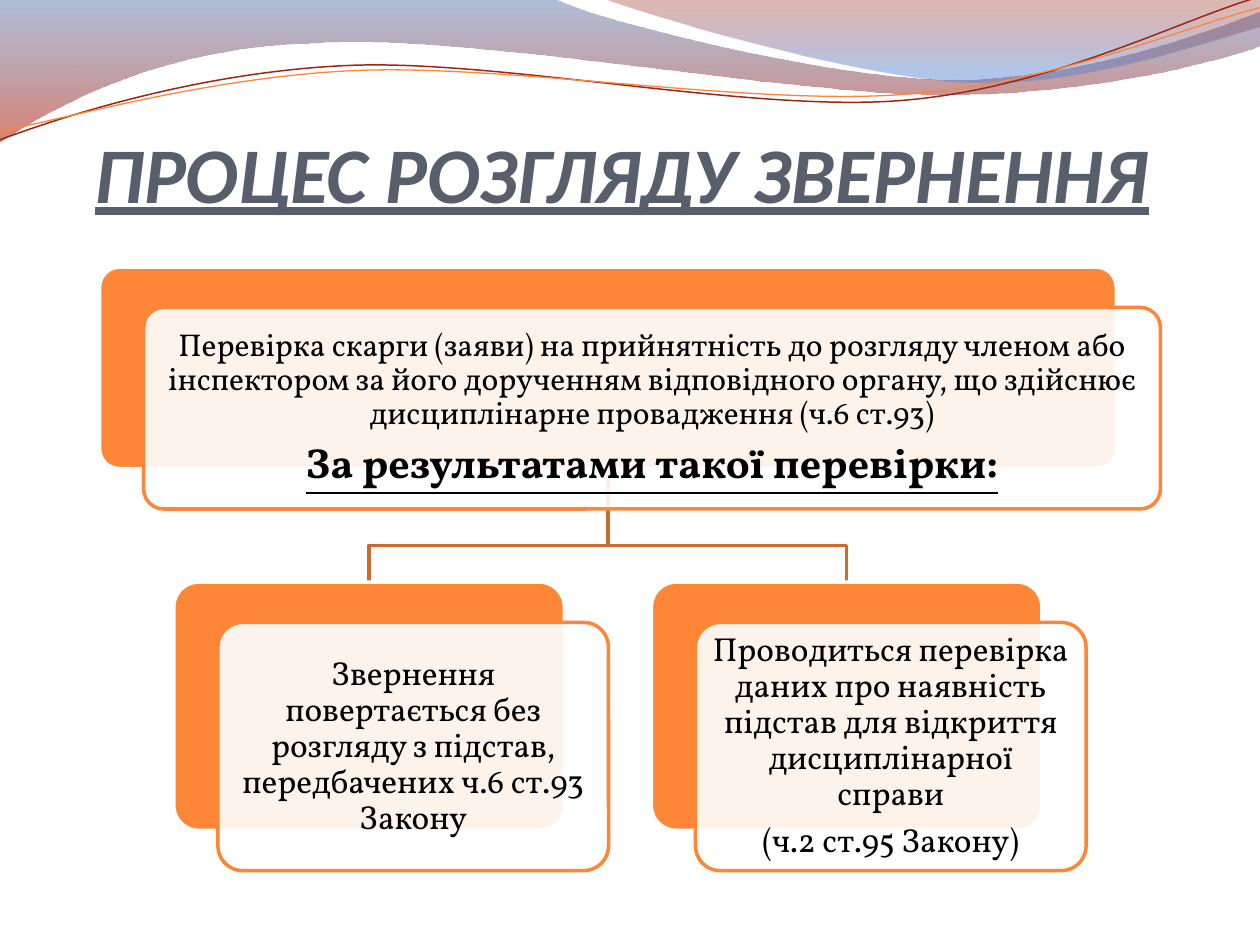
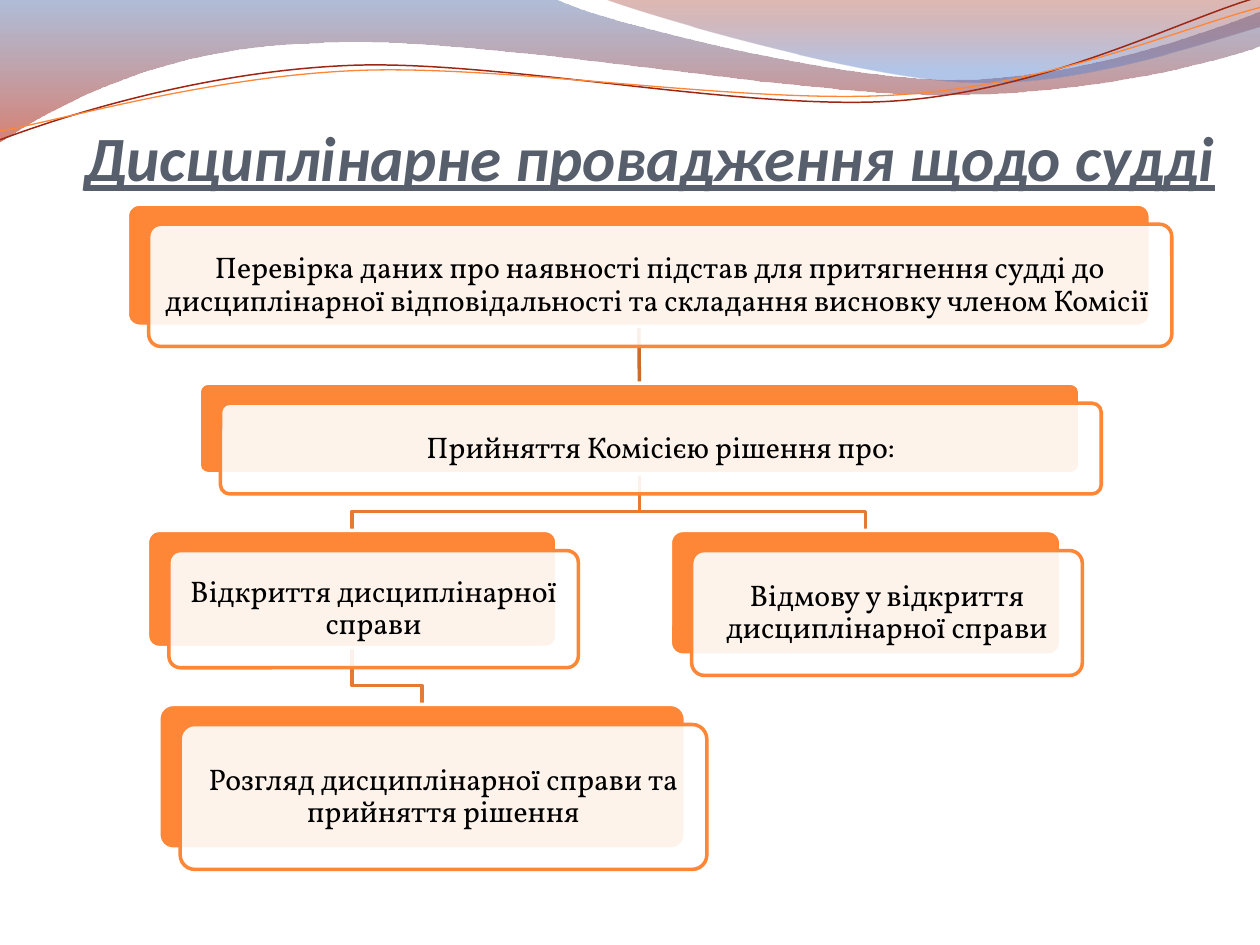
from dataclasses import dataclass
from pptx import Presentation
from pptx.dml.color import RGBColor
from pptx.enum.shapes import MSO_CONNECTOR, MSO_SHAPE
from pptx.enum.text import MSO_ANCHOR, PP_ALIGN
from pptx.oxml.ns import qn
from pptx.oxml.xmlchemy import OxmlElement
from pptx.util import Inches, Pt


@dataclass(frozen=True)
class Theme:
    paper: str = "FFFFFF"
    ink: str = "000000"
    title: str = "575F6D"
    accent: str = "FE8637"
    first_link: str = "CB6B2C"
    lower_link: str = "E77A32"
    wave_line: str = "9E2713"
    title_font: str = "Calibri"
    body_font: str = "Vollkorn"
    large_title: float = 45
    small_title: float = 36
    emphasis: float = 24
    branch: float = 19
    check: float = 18
    step: float = 17
    outline: float = 2


@dataclass(frozen=True)
class Box:
    left: float
    top: float
    width: float
    height: float

    @property
    def center(self):
        return self.left + self.width / 2

    @property
    def bottom(self):
        return self.top + self.height

    def shifted(self, right, down):
        return Box(self.left + right, self.top + down, self.width, self.height)

    def lengths(self):
        return [Inches(value) for value in (self.left, self.top, self.width, self.height)]


THEME = Theme()

LEFT_WAVE = [
    (0, 0), (4.4, -0.01),
    (4.76, 0.17, 6.64, 0.63, 7.58, 0.63), (8.53, 0.63, 9.58, 0.26, 10, 0.09),
    (10.01, 0.36),
    (9.83, 0.44, 8.7, 0.76, 7.46, 0.75), (6.22, 0.75, 3.82, 0.28, 2.57, 0.34),
    (1.29, 0.36, 0.46, 0.83, -0.01, 1.13), (0, 0),
]
RIGHT_WAVE = [
    (4.79, -0.01),
    (5.09, 0.11, 6.82, 0.62, 7.69, 0.65), (8.56, 0.69, 9.61, 0.32, 10, 0.21),
    (10, 0), (4.79, -0.01),
]
RED_CURVE = [
    (0, 1.11), (0.48, 0.93, 1.58, 0.57, 2.77, 0.52),
    (3.95, 0.47, 5.93, 0.89, 7.13, 0.8), (8.33, 0.71, 9.38, 0.15, 9.98, -0.02),
]
ORANGE_CURVE = [
    (0, 1.04), (0.47, 0.96, 1.64, 0.61, 2.83, 0.56),
    (4.03, 0.51, 5.97, 0.84, 7.17, 0.75), (8.36, 0.67, 9.41, 0.21, 10, 0.06),
]


def rgb(value):
    return RGBColor.from_string(value)


def bend_segments(shape, segments):
    lines = iter(list(shape.element.spPr.iter(qn("a:lnTo"))))
    for segment in segments[1:]:
        parts = [next(lines) for _ in range(len(segment) // 2)]
        if len(parts) == 3:
            curve = OxmlElement("a:cubicBezTo")
            parts[0].addprevious(curve)
            for part in parts:
                curve.append(part[0])
                part.getparent().remove(part)


def add_outline(page, segments, close):
    corners = [(Inches(segment[i]), Inches(segment[i + 1]))
               for segment in segments for i in range(0, len(segment), 2)]
    builder = page.shapes.build_freeform(*corners[0])
    builder.add_line_segments(corners[1:], close=close)
    shape = builder.convert_to_shape()
    shape.shadow.inherit = False
    bend_segments(shape, segments)
    return shape


def set_line(shape, color, width):
    shape.line.color.rgb = rgb(color)
    shape.line.width = Pt(width)


def set_opacity(shape, *percents):
    for color, percent in zip(shape.element.spPr.iter(qn("a:srgbClr")), percents):
        alpha = OxmlElement("a:alpha")
        alpha.set("val", str(percent * 1000))
        color.append(alpha)


def add_wave(page, segments, stops):
    wave = add_outline(page, segments, True)
    wave.fill.gradient()
    wave.fill.gradient_angle = 270
    for stop, (position, color, _) in zip(wave.fill.gradient_stops, stops):
        stop.position = position
        stop.color.rgb = rgb(color)
    set_opacity(wave, *[opacity for _, _, opacity in stops])
    wave.line.fill.background()


def add_open_line(page, segments, color, width):
    line = add_outline(page, segments, False)
    line.fill.background()
    set_line(line, color, width)


def add_header(page):
    add_wave(page, LEFT_WAVE, [(0, "4F6EA8", 45), (1, "B61A00", 55)])
    add_wave(page, RIGHT_WAVE, [(0, "951500", 30), (0.8, "5681D1", 45)])
    add_open_line(page, RED_CURVE, THEME.wave_line, 0.85)
    add_open_line(page, ORANGE_CURVE, THEME.accent, 0.75)


def add_span(para, text, font, size, color, strong=False):
    span = para.add_run()
    span.text = text
    span.font.name = font
    span.font.size = Pt(size)
    span.font.color.rgb = rgb(color)
    span.font.bold = strong
    span.font.underline = strong
    return span


def set_frame(frame, anchor, inset):
    frame.word_wrap = True
    frame.vertical_anchor = anchor
    frame.margin_left = frame.margin_right = Inches(inset)
    frame.margin_top = frame.margin_bottom = Inches(inset)


def add_title(page, box, text, size, align):
    frame = page.shapes.add_textbox(*box.lengths()).text_frame
    set_frame(frame, MSO_ANCHOR.BOTTOM, 0)
    para = frame.paragraphs[0]
    para.alignment = align
    span = add_span(para, text, THEME.title_font, size, THEME.title, True)
    span.font.italic = True


def add_panel(page, box, fill, line):
    panel = page.shapes.add_shape(MSO_SHAPE.ROUNDED_RECTANGLE, *box.lengths())
    panel.adjustments[0] = 0.1
    panel.shadow.inherit = False
    panel.fill.solid()
    panel.fill.fore_color.rgb = rgb(fill)
    set_line(panel, line, THEME.outline)
    return panel


def add_card(page, box, offset, lines, inset=0.07):
    back = add_panel(page, box, THEME.accent, THEME.paper)
    front = add_panel(page, box.shifted(*offset), THEME.paper, THEME.accent)
    set_opacity(front, 90)
    frame = front.text_frame
    set_frame(frame, MSO_ANCHOR.MIDDLE, inset)
    for index, (text, size, strong) in enumerate(lines):
        para = frame.add_paragraph() if index else frame.paragraphs[0]
        para.alignment = PP_ALIGN.CENTER
        para.line_spacing = 0.9
        para.space_after = Pt(0.35 * size)
        add_span(para, text, THEME.body_font, size, THEME.ink, strong)
    return back


def add_elbow(page, parent, child, rise, color):
    bend = child.top - rise
    corners = [(parent.center, parent.bottom), (parent.center, bend),
               (child.center, bend), (child.center, child.top)]
    add_open_line(page, corners, color, THEME.outline)


def add_straight_link(page, color):
    link = page.shapes.add_connector(MSO_CONNECTOR.STRAIGHT, 0, 0, 0, 0)
    set_line(link, color, THEME.outline)
    link.element.spPr.append(OxmlElement("a:effectLst"))
    return link


def add_page(deck):
    page = deck.slides.add_slide(deck.slide_layouts[6])
    add_header(page)
    return page


def build_appeal_review(deck):
    page = add_page(deck)
    add_title(page, Box(0.75, 0.77, 8.75, 0.97), "ПРОЦЕС РОЗГЛЯДУ ЗВЕРНЕННЯ",
              THEME.large_title, PP_ALIGN.LEFT)
    check = Box(0.79, 2.12, 8.07, 1.6)
    returned = Box(1.38, 4.62, 3.1, 1.97)
    examined = returned.shifted(3.79, 0)
    offset = (0.35, 0.32)
    for branch in (examined, returned):
        add_elbow(page, check, branch, 0.29, THEME.first_link)
    add_card(page, check, offset, [
        ("Перевірка скарги (заяви) на прийнятність до розгляду членом або інспектором "
         "за його дорученням відповідного органу, що здійснює дисциплінарне "
         "провадження (ч.6 ст.93)", THEME.check, False),
        ("За результатами такої перевірки:", THEME.emphasis, True),
    ])
    add_card(page, returned, offset, [
        ("Звернення повертається без розгляду з підстав, передбачених ч.6 ст.93 Закону",
         THEME.branch, False),
    ], 0.08)
    add_card(page, examined, offset, [
        ("Проводиться перевірка даних про наявність підстав для відкриття "
         "дисциплінарної справи", THEME.branch, False),
        ("(ч.2 ст.95 Закону)", THEME.branch, False),
    ], 0.08)


def build_disciplinary_process(deck):
    page = add_page(deck)
    add_title(page, Box(0.59, 0.77, 9.13, 0.77), "Дисциплінарне провадження щодо судді",
              THEME.small_title, PP_ALIGN.CENTER)
    check = Box(1.01, 1.62, 8.12, 0.97)
    decision = Box(1.58, 3.04, 6.99, 0.72)
    opening = Box(1.17, 4.21, 3.25, 0.93)
    hearing = Box(1.26, 5.59, 4.18, 1.15)
    refusal = Box(5.32, 4.21, 3.1, 0.99)
    for parent, child in ((decision, refusal), (opening, hearing), (decision, opening)):
        add_elbow(page, parent, child, 0.15, THEME.lower_link)
    link = add_straight_link(page, THEME.first_link)
    steps = [
        (check, "Перевірка даних про наявності підстав для притягнення судді до "
                "дисциплінарної відповідальності та складання висновку членом Комісії "),
        (decision, "Прийняття Комісією рішення про:"),
        (opening, "Відкриття дисциплінарної справи"),
        (hearing, "Розгляд дисциплінарної справи та прийняття рішення"),
        (refusal, "Відмову у відкриття дисциплінарної справи"),
    ]
    cards = [add_card(page, box, (0.17, 0.16), [(text, THEME.step, False)])
             for box, text in steps]
    link.begin_connect(cards[0], 2)
    link.end_connect(cards[1], 0)


def main():
    deck = Presentation()
    deck.slide_width = Inches(10)
    deck.slide_height = Inches(7.5)
    build_appeal_review(deck)
    build_disciplinary_process(deck)
    deck.save("out.pptx")


if __name__ == "__main__":
    main()
